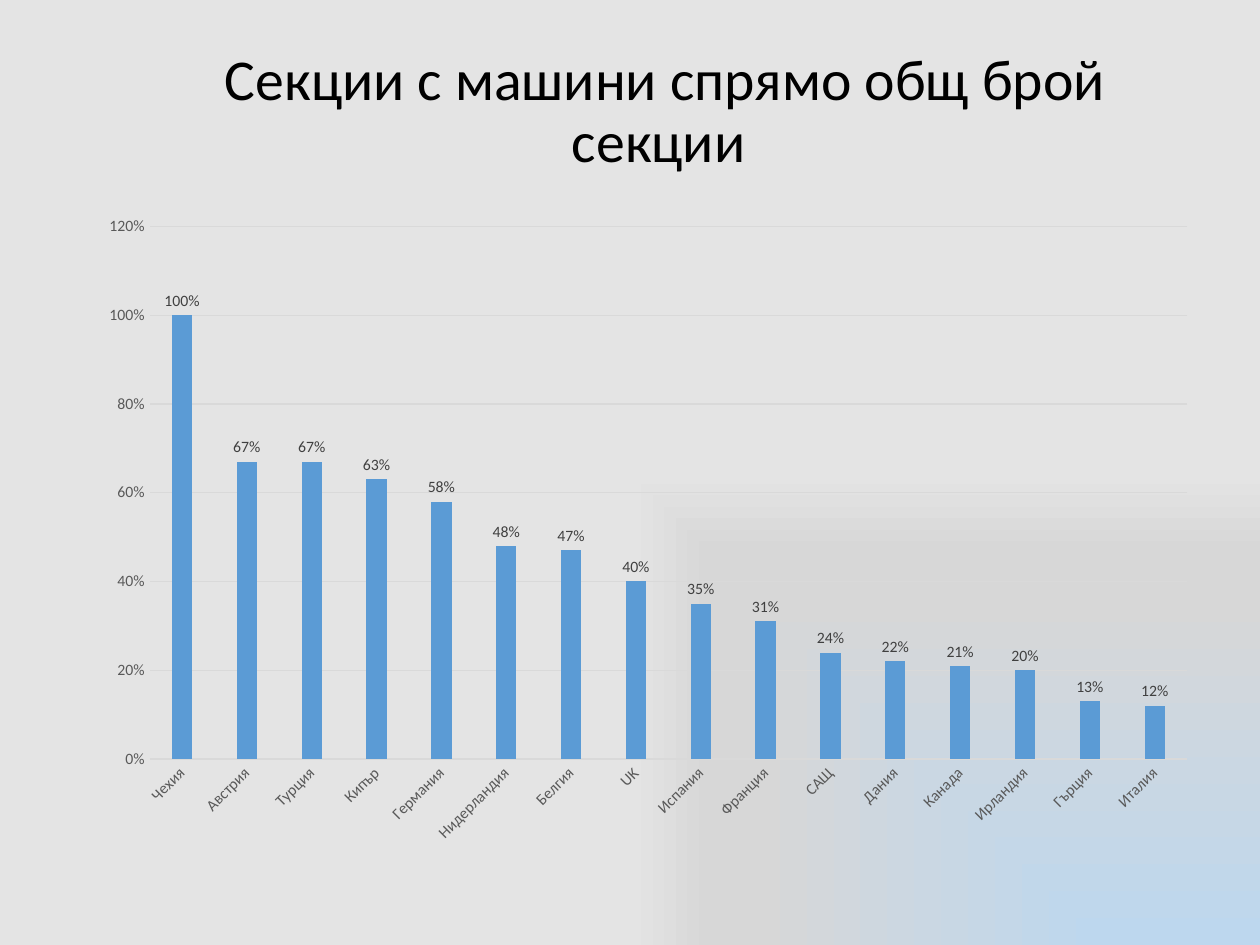
import pptx
import pptx.chart.data
import pptx.dml.color
import pptx.enum.chart
import pptx.enum.text
import pptx.oxml
import pptx.oxml.ns
import pptx.util

WIDTH, HEIGHT = 10, 7.5
FONT = "Calibri"
BACKGROUND_STOPS = [(0, "BDD7EE"), (74, "D7D7D7"), (83, "D7D7D7"), (100, "E4E4E4")]
MACHINE_SHARES = {
    "Чехия": 1, "Австрия": 0.67, "Турция": 0.67, "Кипър": 0.63,
    "Германия": 0.58, "Нидерландия": 0.48, "Белгия": 0.47, "UK": 0.4,
    "Испания": 0.35, "Франция": 0.31, "САЩ": 0.24, "Дания": 0.22,
    "Канада": 0.21, "Ирландия": 0.2, "Гърция": 0.13, "Италия": 0.12,
}


def color(hex_string):
    return pptx.dml.color.RGBColor.from_string(hex_string)


def set_font(font, size, hex_string):
    font.name = FONT
    font.size = pptx.util.Pt(size)
    font.color.rgb = color(hex_string)


class SlideBuilder:
    def __init__(self, presentation):
        self.slide = presentation.slides.add_slide(presentation.slide_layouts[6])

    def box(self, left, top, width, height):
        """Turn shares of the slide's size into lengths."""
        return [
            pptx.util.Inches(share * side)
            for share, side in zip((left, top, width, height), (WIDTH, HEIGHT) * 2)
        ]

    def corner_gradient(self, stops):
        """Fill the background with a gradient spreading from the lower right corner."""
        self.slide.background.fill.gradient()
        old_fill = self.slide.element.find(".//" + pptx.oxml.ns.qn("a:gradFill"))
        stop_list = "".join(
            f'<a:gs pos="{position * 1000}"><a:srgbClr val="{hex_string}"/></a:gs>'
            for position, hex_string in stops
        )
        new_fill = pptx.oxml.parse_xml(
            f'<a:gradFill {pptx.oxml.ns.nsdecls("a")} rotWithShape="1">'
            f"<a:gsLst>{stop_list}</a:gsLst>"
            '<a:path path="rect"><a:fillToRect l="100000" t="100000"/></a:path>'
            "</a:gradFill>"
        )
        old_fill.getparent().replace(old_fill, new_fill)

    def title(self, text, shares):
        frame = self.slide.shapes.add_textbox(*self.box(*shares)).text_frame
        frame.word_wrap = True
        frame.vertical_anchor = pptx.enum.text.MSO_ANCHOR.MIDDLE
        paragraph = frame.paragraphs[0]
        paragraph.alignment = pptx.enum.text.PP_ALIGN.CENTER
        paragraph.line_spacing = 0.9
        run = paragraph.add_run()
        run.text = text
        set_font(run.font, 33, "000000")

    def column_chart(self, values, shares):
        data = pptx.chart.data.CategoryChartData(number_format="0%")
        data.categories = list(values)
        data.add_series("Series 1", list(values.values()))
        chart = self.slide.shapes.add_chart(
            pptx.enum.chart.XL_CHART_TYPE.COLUMN_CLUSTERED, *self.box(*shares), data
        ).chart
        chart.has_legend = False
        chart.has_title = False
        set_font(chart.font, 10, "000000")
        self.style_axes(chart)
        self.style_columns(chart.plots[0])

    def style_axes(self, chart):
        category_axis, value_axis = chart.category_axis, chart.value_axis
        for axis in (category_axis, value_axis):
            axis.major_tick_mark = pptx.enum.chart.XL_TICK_MARK.NONE
            axis.minor_tick_mark = pptx.enum.chart.XL_TICK_MARK.NONE
            set_font(axis.tick_labels.font, 9, "595959")
        value_axis.minimum_scale, value_axis.maximum_scale = 0, 1.2
        value_axis.major_unit = 0.2
        value_axis.tick_labels.number_format = "0%"
        value_axis.tick_labels.number_format_is_linked = False
        value_axis.format.line.fill.background()
        value_axis.has_major_gridlines = True
        for line in (category_axis.format.line, value_axis.major_gridlines.format.line):
            line.color.rgb = color("D9D9D9")
            line.width = pptx.util.Pt(0.75)
        label_body = category_axis.tick_labels.font._element.getparent().getparent().getparent()
        label_body.find(pptx.oxml.ns.qn("a:bodyPr")).set("rot", str(-45 * 60000))

    def style_columns(self, plot):
        plot.gap_width = 219
        plot.overlap = -27
        plot.vary_by_categories = False
        fill = plot.series[0].format.fill
        fill.solid()
        fill.fore_color.rgb = color("5B9BD5")
        labels = plot.series[0].data_labels
        labels.show_value = True
        labels.number_format = "0%"
        labels.number_format_is_linked = False
        labels.position = pptx.enum.chart.XL_LABEL_POSITION.OUTSIDE_END
        set_font(labels.font, 9, "404040")


def main():
    presentation = pptx.Presentation()
    presentation.slide_width = pptx.util.Inches(WIDTH)
    presentation.slide_height = pptx.util.Inches(HEIGHT)
    builder = SlideBuilder(presentation)
    builder.corner_gradient(BACKGROUND_STOPS)
    builder.title("Секции с машини спрямо общ брой секции ", (0.097, 0.023, 0.862, 0.193))
    builder.column_chart(MACHINE_SHARES, (0.069, 0.216, 0.891, 0.689))
    presentation.save("out.pptx")


if __name__ == "__main__":
    main()
